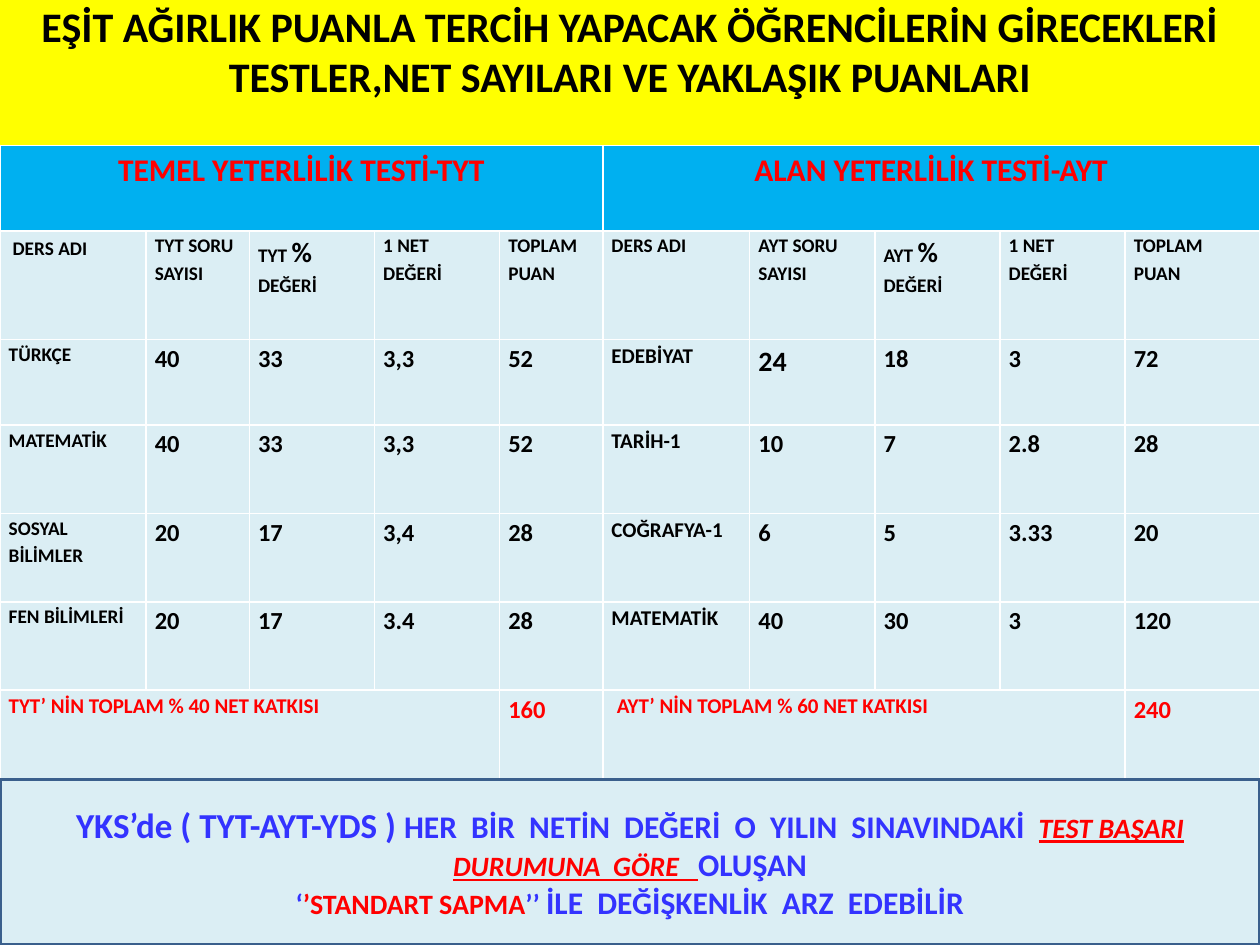
from pptx import Presentation
from pptx.dml.color import RGBColor as RGB
from pptx.enum.shapes import MSO_SHAPE as SHAPE
from pptx.enum.text import MSO_ANCHOR as ANCHOR, MSO_AUTO_SIZE as AUTO, PP_ALIGN as ALIGN
from pptx.util import Pt

HUES = {"black": "000000", "red": "FF0000", "blue": "3333FF", "yellow": "FFFF00",
        "sky": "00B0F0", "pale": "DBEEF4", "edge": "3A5F8C"}


def paint(fill, hue):
    fill.solid()
    fill.fore_color.rgb = RGB.from_string(HUES[hue])


def style(run, size, hue):
    run.font.name = "Calibri"
    run.font.size = Pt(size)
    run.font.bold = True
    run.font.color.rgb = RGB.from_string(HUES[hue])


deck = Presentation()
deck.slide_width, deck.slide_height = Pt(720), Pt(540)
slide = deck.slides.add_slide(deck.slide_layouts[5])

title = slide.shapes.title
title.left, title.top, title.width, title.height = Pt(0), Pt(0), Pt(720), Pt(88.5)
paint(title.fill, "yellow")
frame = title.text_frame
frame.text = ("EŞİT AĞIRLIK PUANLA TERCİH YAPACAK ÖĞRENCİLERİN GİRECEKLERİ "
              "TESTLER,NET SAYILARI VE YAKLAŞIK PUANLARI")
frame.word_wrap = True
frame.auto_size = AUTO.NONE
frame.vertical_anchor = ANCHOR.TOP
frame.margin_top = Pt(0)
frame.paragraphs[0].alignment = ALIGN.CENTER
style(frame.paragraphs[0].runs[0], 24, "black")

widths = [83.5, 59, 71.5, 71.5, 59, 84, 71.5, 71.5, 71.5, 77]
heights = [49, 62, 49, 50.5, 50.5, 50.5, 50.5]
rows = [
    ["TEMEL YETERLİLİK TESTİ-TYT", "", "", "", "",
     "ALAN YETERLİLİK TESTİ-AYT", "", "", "", ""],
    ["DERS ADI", "TYT SORU SAYISI", "TYT % DEĞERİ", "1 NET DEĞERİ", "TOPLAM PUAN",
     "DERS ADI", "AYT SORU SAYISI", "AYT % DEĞERİ", "1 NET DEĞERİ", "TOPLAM\nPUAN"],
    ["TÜRKÇE", "40", "33", "3,3", "52", "EDEBİYAT", "24", "18", "3", "72"],
    ["MATEMATİK", "40", "33", "3,3", "52", "TARİH-1", "10", "7", "2.8", "28"],
    ["SOSYAL BİLİMLER", "20", "17", "3,4", "28", "COĞRAFYA-1", "6", "5", "3.33", "20"],
    ["FEN BİLİMLERİ", "20", "17", "3.4", "28", "MATEMATİK", "40", "30", "3", "120"],
    ["TYT’ NİN TOPLAM % 40 NET KATKISI", "", "", "", "160",
     "AYT’ NİN TOPLAM % 60 NET KATKISI", "", "", "", "240"],
]
last = len(rows) - 1
table = slide.shapes.add_table(len(rows), len(widths), Pt(0), Pt(83),
                               Pt(sum(widths)), Pt(sum(heights))).table
table.horz_banding = False
for col, width in zip(table.columns, widths):
    col.width = Pt(width)
for row, height in zip(table.rows, heights):
    row.height = Pt(height)
for left in (0, 5):
    table.cell(0, left).merge(table.cell(0, left + 4))
    table.cell(last, left).merge(table.cell(last, left + 3))

for r, row in enumerate(rows):
    for c, text in enumerate(row):
        cell = table.cell(r, c)
        paint(cell.fill, "pale" if r else "sky")
        if not text:
            continue
        if r == 0:
            size = 18
        elif r == 1:
            size = 11
        elif c in (0, 5):
            size = 12 if c == 5 or r == last else 11
        else:
            size = 16 if text == "24" else 14
        hue = "red" if r in (0, last) else "black"
        cell.text_frame.text = text
        if r and (r, c) != (1, 0):
            cell.margin_left = cell.margin_right = Pt(5)
            cell.margin_top = cell.margin_bottom = Pt(0)
        for para in cell.text_frame.paragraphs:
            if r == 0:
                para.alignment = ALIGN.CENTER
            elif (r, c) != (1, 0):
                para.line_spacing = 1.15
            if r == 1 and "%" in text:
                head, tail = text.split("%")
                para.text = head
                for part in ("%", tail):
                    para.add_run().text = part
            for run in para.runs:
                style(run, 16 if run.text == "%" else size, hue)
table.cell(last, 5).margin_left = Pt(8)

note = slide.shapes.add_shape(SHAPE.RECTANGLE, Pt(0), Pt(445.5), Pt(720), Pt(94.5))
note.shadow.inherit = False
paint(note.fill, "pale")
paint(note.line.fill, "edge")
note.line.width = Pt(2)
lines = [
    [("YKS’de ( TYT-AYT-YDS ) ", 20, "blue", False),
     ("HER  BİR  NETİN  DEĞERİ  O  YILIN  SINAVINDAKİ ", 18, "blue", False),
     (" ", 16, "blue", False),
     ("TEST BAŞARI DURUMUNA  GÖRE   ", 16, "red", True),
     ("OLUŞAN", 18, "blue", False)],
    [("‘", 16, "blue", False),
     ("’STANDART SAPMA", 16, "red", False),
     ("’’ ", 16, "blue", False),
     ("İLE  DEĞİŞKENLİK  ARZ  EDEBİLİR", 18, "blue", False)],
]
frame = note.text_frame
frame.word_wrap = True
frame.vertical_anchor = ANCHOR.MIDDLE
frame.text = "\n".join(line[0][0] for line in lines)
for para, line in zip(frame.paragraphs, lines):
    para.alignment = ALIGN.CENTER
    for text, *_ in line[1:]:
        para.add_run().text = text
    for run, (_, size, hue, marked) in zip(para.runs, line):
        style(run, size, hue)
        run.font.italic = run.font.underline = marked

deck.save("out.pptx")
